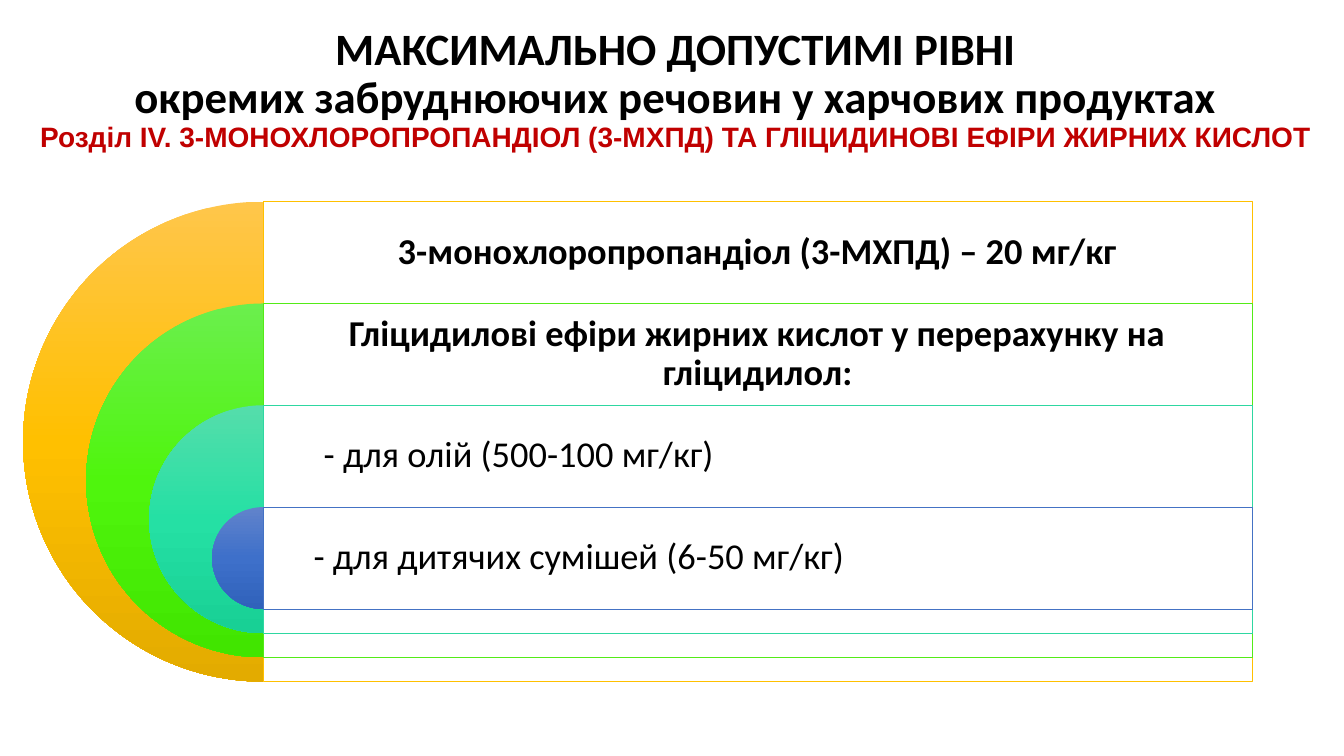
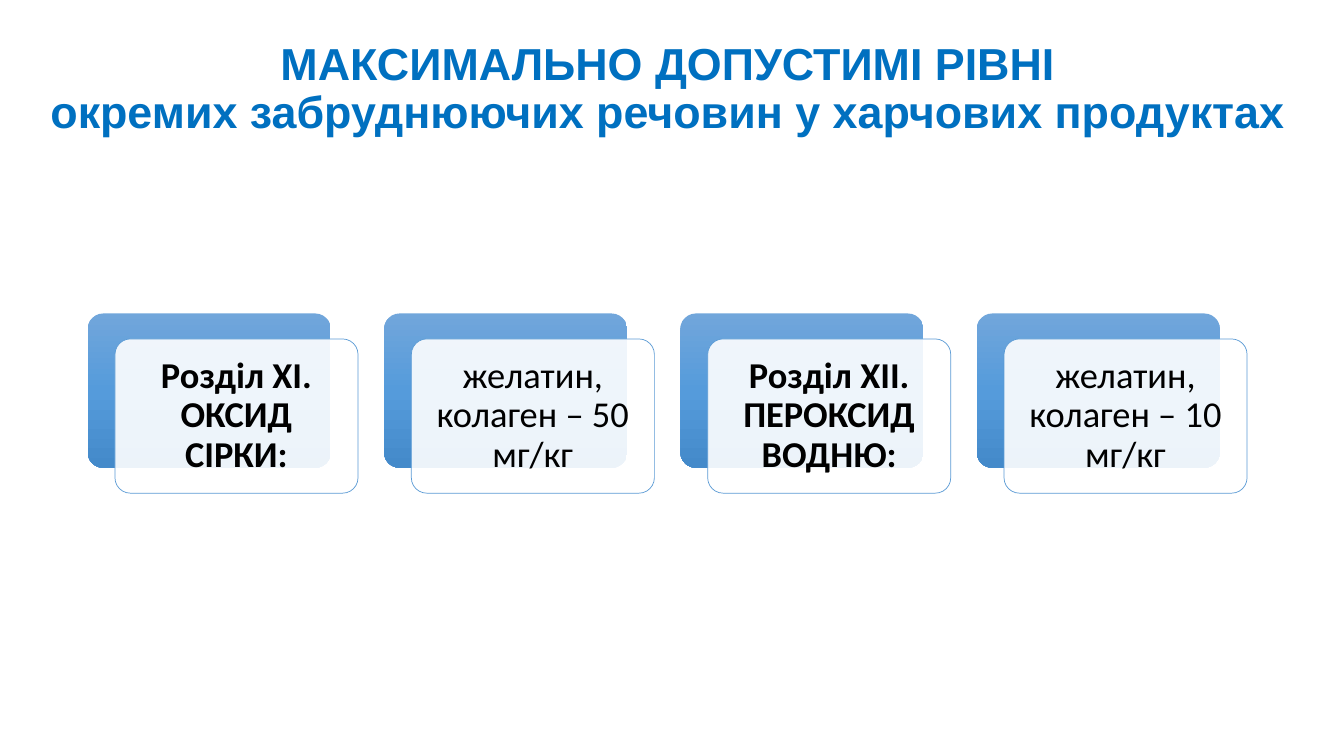
import copy
from dataclasses import dataclass

import pptx
import pptx.dml.color
import pptx.enum.shapes
import pptx.enum.text
import pptx.oxml
import pptx.oxml.ns
import pptx.util


@dataclass(frozen=True)
class Theme:
    body_font: str = "Calibri"
    accent_font: str = "Arial"
    title_size: int = 32
    subtitle_size: int = 20
    body_size: int = 26
    ink: str = "000000"
    red: str = "C00000"
    blue: str = "0070C0"
    panel: str = "FFFFFF"
    panel_opacity: int = 90
    outline: float = 0.5
    line_spacing: float = 0.9
    inset: float = 0.11
    # Each ring: gradient top, middle, bottom, then the panel outline
    rings: tuple = (
        (("FFC64B", "FFC000", "E3AB00"), "FFC000"),
        (("6BEF4D", "4FF50D", "41E500"), "53EB17"),
        (("55DDAB", "25E0A4", "18D095"), "2ED7A1"),
        (("6183CB", "3E70CA", "3062BB"), "4472C4"),
    )
    card: tuple = (("71A6DB", "559BDB", "448ACA"), "5B9BD5")


theme = Theme()
shapes = pptx.enum.shapes.MSO_SHAPE
align = pptx.enum.text.PP_ALIGN
rgb = pptx.dml.color.RGBColor.from_string

deck = pptx.Presentation()
deck.slide_width = pptx.util.Inches(13.33)
deck.slide_height = pptx.util.Inches(7.5)

# The grid: 100 columns by 100 rows over the slide
COLUMN = deck.slide_width / 100
ROW = deck.slide_height / 100


def write(box, text, font=theme.body_font, size=theme.body_size, color=theme.ink,
          bold=False, alignment=align.CENTER, indent=0):
    """Add text to the first paragraph of a box; a newline is a line break."""
    frame = box.text_frame
    frame.word_wrap = True
    frame.auto_size = pptx.enum.text.MSO_AUTO_SIZE.NONE
    frame.vertical_anchor = pptx.enum.text.MSO_ANCHOR.MIDDLE
    para = frame.paragraphs[0]
    para.alignment = alignment
    para.line_spacing = theme.line_spacing
    if indent:
        para._p.get_or_add_pPr().set("indent", str(round(indent * COLUMN)))
    for number, line in enumerate(text.split("\n")):
        if number:
            para.add_line_break()
        if line:
            span = para.add_run()
            span.text = line
            span.font.name = font
            span.font.size = pptx.util.Pt(size)
            span.font.bold = bold
            span.font.color.rgb = rgb(color)


def draw(page, kind, left, top, width, height, gradient=None, line=None):
    """Draw a gradient shape, or a translucent outlined panel for text."""
    shape = page.shapes.add_shape(kind, *(round(n) for n in (left, top, width, height)))
    shape.shadow.inherit = False
    if gradient:
        shape.line.fill.background()
        shape.fill.gradient()
        shape.fill.gradient_angle = 270
        stop_list = shape._element.spPr.find(".//" + pptx.oxml.ns.qn("a:gsLst"))
        stop_list.append(copy.deepcopy(stop_list[0]))
        for stop, position, color in zip(shape.fill.gradient_stops, (0, 0.5, 1), gradient):
            stop.position = position
            stop.color.rgb = rgb(color)
    else:
        shape.fill.solid()
        shape.fill.fore_color.rgb = rgb(theme.panel)
        color_node = shape._element.spPr.find(".//" + pptx.oxml.ns.qn("a:srgbClr"))
        alpha = pptx.oxml.parse_xml(
            f'<a:alpha {pptx.oxml.ns.nsdecls("a")} val="{theme.panel_opacity * 1000}"/>')
        color_node.append(alpha)
        shape.line.color.rgb = rgb(line)
        shape.line.width = pptx.util.Pt(theme.outline)
        frame = shape.text_frame
        frame.margin_left = frame.margin_right = pptx.util.Inches(theme.inset)
        frame.margin_top = frame.margin_bottom = pptx.util.Inches(theme.inset)
    return shape


# Pages and their shared title position
HEADING = "МАКСИМАЛЬНО ДОПУСТИМІ РІВНІ\nокремих забруднюючих речовин у харчових продуктах"
pages = []
for left, width in ((1.73, 97.07), (0.6, 98.2)):
    page = deck.slides.add_slide(deck.slide_layouts[5])
    title = page.shapes.title
    title.left, title.width = round(left * COLUMN), round(width * COLUMN)
    title.top, title.height = round(2.27 * ROW), round(19.33 * ROW)
    pages.append(page)
rings_page, cards_page = pages

# Slide 1: title
write(rings_page.shapes.title, HEADING + "\n", size=theme.title_size, bold=True)
write(rings_page.shapes.title,
      "Розділ IV. 3-МОНОХЛОРОПРОПАНДІОЛ (3-MХПД) ТА ГЛІЦИДИНОВІ ЕФІРИ ЖИРНИХ КИСЛОТ",
      font=theme.accent_font, size=theme.subtitle_size, color=theme.red, bold=True)

# Slide 1: nested half rings, each with a panel whose top band holds the text
limits = (
    ("3-монохлоропропандіол (3-MХПД) – 20 мг/кг", {"bold": True}),
    ("Гліцидилові ефіри жирних кислот у перерахунку на гліцидилол:", {"bold": True}),
    ("- для олій (500-100 мг/кг)", {"alignment": align.LEFT, "indent": 3.68}),
    ("- для дитячих сумішей (6-50 мг/кг)", {"alignment": align.LEFT, "indent": 2.93}),
)
axis, panel_width = 19.58 * COLUMN, 73.6 * COLUMN
band, diameter_step = 13.47 * ROW, 16.67 * ROW
for index, ((text, style), (gradient, line)) in enumerate(zip(limits, theme.rings)):
    top = 26.67 * ROW + index * band
    diameter = band + (len(limits) - 1 - index) * diameter_step
    ring = draw(rings_page, shapes.PIE, axis - diameter / 2, top, diameter, diameter,
                gradient=gradient)
    ring.adjustments[0], ring.adjustments[1] = 54, 162
    panel = draw(rings_page, shapes.RECTANGLE, axis, top, panel_width, diameter, line=line)
    panel.text_frame.margin_bottom += round(diameter - band)
    write(panel, text, **style)

# Slide 2: title
write(cards_page.shapes.title, HEADING, font=theme.accent_font,
      size=theme.title_size, color=theme.blue, bold=True)

# Slide 2: a row of cards, each a gradient back and an offset front
cards = (
    ("Розділ XI. ОКСИД СІРКИ:", True),
    ("желатин, колаген – 50 мг/кг", False),
    ("Розділ XII. ПЕРОКСИД ВОДНЮ:", True),
    ("желатин, колаген – 10 мг/кг", False),
)
card_size = (18.08 * COLUMN, 20.4 * ROW)
gradient, line = theme.card
for index, (text, bold) in enumerate(cards):
    left, top = (6.53 + index * 22.05) * COLUMN, 41.47 * ROW
    back = draw(cards_page, shapes.ROUNDED_RECTANGLE, left, top, *card_size,
                gradient=gradient)
    front = draw(cards_page, shapes.ROUNDED_RECTANGLE, left + 2.03 * COLUMN,
                 top + 3.37 * ROW, *card_size, line=line)
    back.adjustments[0] = front.adjustments[0] = 0.1
    write(front, text, bold=bold)

deck.save("out.pptx")
